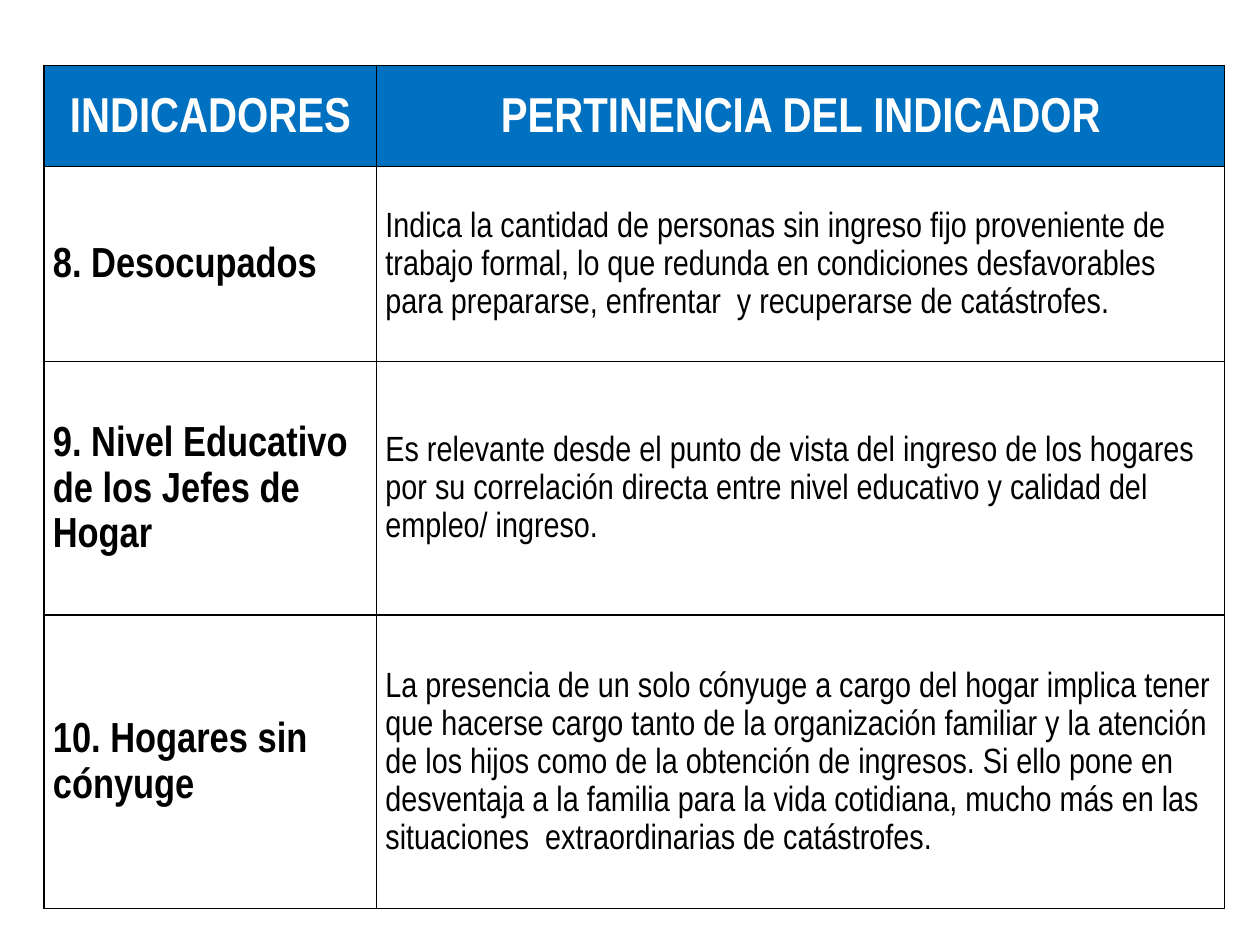
from dataclasses import dataclass
from lxml.etree import SubElement
from pptx import Presentation
from pptx.dml.color import RGBColor
from pptx.enum.text import MSO_ANCHOR, PP_ALIGN
from pptx.oxml.ns import qn
from pptx.util import Inches, Pt


@dataclass(frozen=True)
class Theme:
    font: str = "Arial Narrow"
    head: str = "0070C0"
    light: str = "FFFFFF"
    dark: str = "000000"
    title: int = 28
    label: int = 24
    body: int = 20
    rule: int = 1


class Deck:
    def __init__(self, theme):
        self.theme = theme
        self.show = Presentation()
        self.show.slide_width = Inches(10)
        self.show.slide_height = Inches(7.5)
        self.unit = self.show.slide_width // 1000
        self.slide = self.show.slides.add_slide(self.show.slide_layouts[6])

    def table(self, left, top, cols, rows, data):
        box = [n * self.unit for n in (left, top, sum(cols), sum(rows))]
        table = self.slide.shapes.add_table(len(rows), len(cols), *box).table
        table.first_row = table.horz_banding = False
        for col, wide in zip(table.columns, cols):
            col.width = wide * self.unit
        for row, high in zip(table.rows, rows):
            row.height = high * self.unit
        for i, line in enumerate(data):
            for j, text in enumerate(line):
                self.cell(table.cell(i, j), text, i == 0, j == 0)

    def cell(self, cell, text, head, label):
        look = self.theme
        self.border(cell)
        if head:
            cell.fill.solid()
            cell.fill.fore_color.rgb = RGBColor.from_string(look.head)
        else:
            cell.fill.background()
        cell.vertical_anchor = MSO_ANCHOR.MIDDLE
        cell.margin_left = cell.margin_right = (5 if head else 7) * self.unit
        cell.margin_top = cell.margin_bottom = 0
        cell.text_frame.text = text
        para = cell.text_frame.paragraphs[0]
        para.alignment = PP_ALIGN.CENTER if head else PP_ALIGN.LEFT
        para.line_spacing = 1.15
        para.space_after = Pt(10)
        font = para.runs[0].font
        font.name = look.font
        font.size = Pt(look.title if head else look.label if label else look.body)
        font.bold = head or label
        font.color.rgb = RGBColor.from_string(look.light if head else look.dark)

    def border(self, cell):
        props = cell._tc.get_or_add_tcPr()
        for side in ("a:lnL", "a:lnR", "a:lnT", "a:lnB"):
            line = SubElement(props, qn(side), w=str(Pt(self.theme.rule)))
            fill = SubElement(line, qn("a:solidFill"))
            SubElement(fill, qn("a:srgbClr"), val=self.theme.dark)


def main():
    deck = Deck(Theme())
    data = [
        ("INDICADORES", "PERTINENCIA DEL INDICADOR"),
        ("8. Desocupados",
         "Indica la cantidad de personas sin ingreso fijo proveniente de "
         "trabajo formal, lo que redunda en condiciones desfavorables para "
         "prepararse, enfrentar  y recuperarse de catástrofes."),
        ("9. Nivel Educativo de los Jefes de Hogar",
         "Es relevante desde el punto de vista del ingreso de los hogares "
         "por su correlación directa entre nivel educativo y calidad del "
         "empleo/ ingreso."),
        ("10. Hogares sin cónyuge",
         "La presencia de un solo cónyuge a cargo del hogar implica tener "
         "que hacerse cargo tanto de la organización familiar y la atención "
         "de los hijos como de la obtención de ingresos. Si ello pone en "
         "desventaja a la familia para la vida cotidiana, mucho más en las "
         "situaciones  extraordinarias de catástrofes."),
    ]
    deck.table(35, 52, (264, 673), (80, 155, 201, 233), data)
    deck.show.save("out.pptx")


if __name__ == "__main__":
    main()
